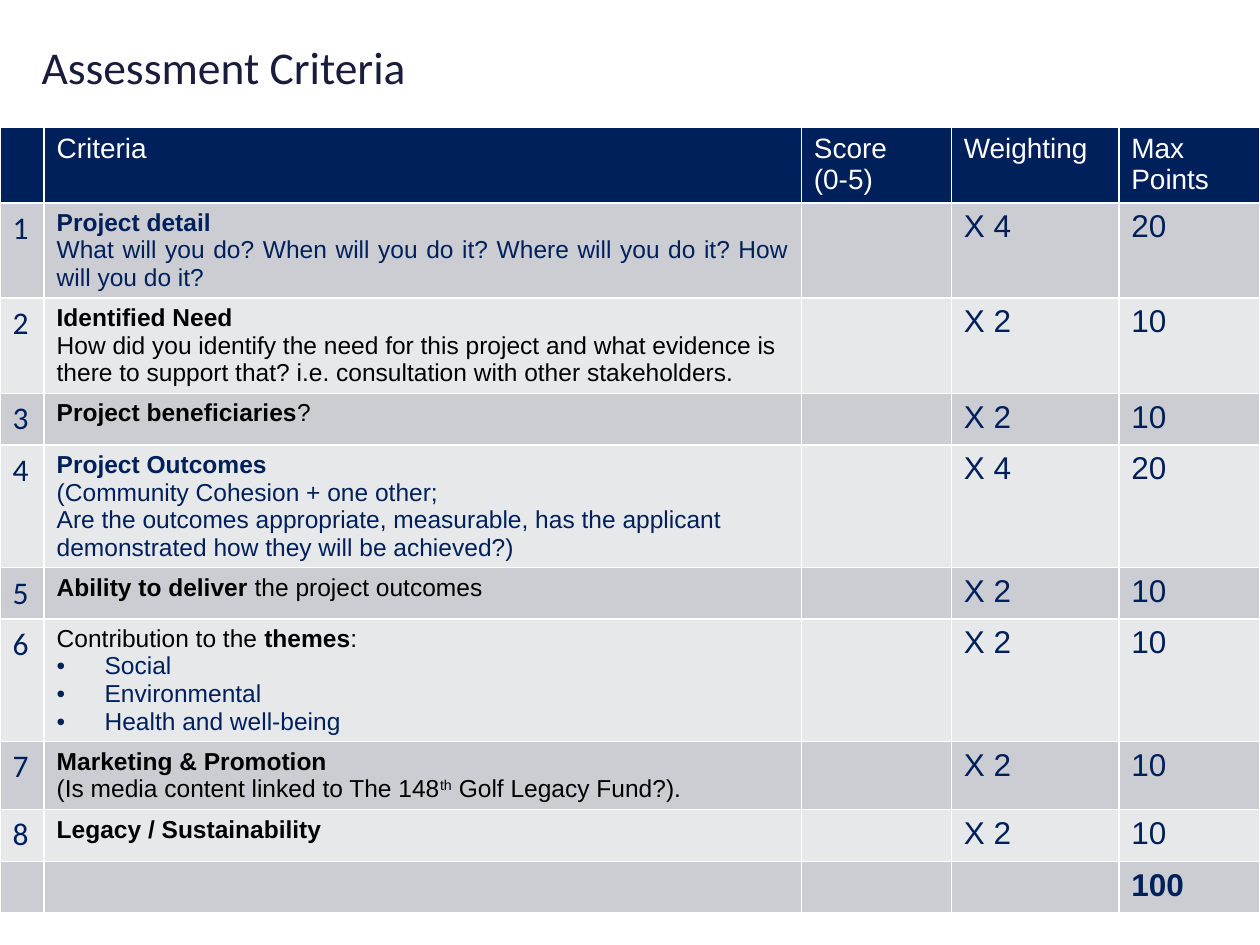
import lxml.etree
import pptx
import pptx.dml.color
import pptx.enum.shapes
import pptx.enum.text
import pptx.oxml.ns
import pptx.util

Inches = pptx.util.Inches
Pt = pptx.util.Pt
RGBColor = pptx.dml.color.RGBColor
qn = pptx.oxml.ns.qn
ALIGN = pptx.enum.text.PP_ALIGN

NAVY = RGBColor(0x00, 0x20, 0x5B)
INK = RGBColor(0x1A, 0x1C, 0x3C)
BLACK = RGBColor(0x00, 0x00, 0x00)
WHITE = RGBColor(0xFF, 0xFF, 0xFF)
DARK_BAND = RGBColor(0xCC, 0xCD, 0xD2)
LIGHT_BAND = RGBColor(0xE7, 0xE8, 0xEA)


def add_run(p, text, color, size, name="Arial", bold=False):
    r = p.add_run()
    r.text = text
    for key, value in {"size": Pt(size), "name": name, "bold": bold}.items():
        setattr(r.font, key, value)
    r.font.color.rgb = color
    return r


def style_cell(cell, fill):
    tcPr = cell._tc.get_or_add_tcPr()
    for side in "LRTB":
        ln = lxml.etree.SubElement(tcPr, qn(f"a:ln{side}"), w=str(Pt(1)))
        line_fill = lxml.etree.SubElement(ln, qn("a:solidFill"))
        lxml.etree.SubElement(line_fill, qn("a:srgbClr"), val=str(WHITE))
    cell.fill.solid()
    cell.fill.fore_color.rgb = fill


prs = pptx.Presentation()
prs.slide_width = Inches(10)
prs.slide_height = Inches(7.5)
s = prs.slides.add_slide(prs.slide_layouts[6])

for top in (0, 6.15):
    sp = s.shapes.add_shape(pptx.enum.shapes.MSO_SHAPE.RECTANGLE,
                            Inches(0), Inches(top), Inches(10), Inches(1.35))
    sp.shadow.inherit = False
    sp.fill.solid()
    sp.fill.fore_color.rgb = WHITE
    sp.line.fill.background()

headers = [[], ["Criteria"], ["Score", "(0-5)"], ["Weighting"], ["Max Points"]]
criteria = [
    (4, NAVY, [
        [("Project detail", "b")],
        [("What will you do? When will you do it? Where will you do it? How will you do it?", "")],
    ]),
    (2, BLACK, [
        [("Identified Need", "b")],
        [("How did you identify the need for this project and what evidence is there to support that? "
          "i.e. consultation with other stakeholders.", "")],
    ]),
    (2, BLACK, [[("Project beneficiaries", "b"), ("?", "")]]),
    (4, NAVY, [
        [("Project Outcomes", "b")],
        [("(Community Cohesion + one other;", "")],
        [("Are the outcomes appropriate, measurable, has the applicant demonstrated "
          "how they will be achieved?)", "")],
    ]),
    (2, BLACK, [[("Ability to deliver", "b"), (" the project outcomes", "")]]),
    (2, BLACK, [
        [("Contribution to the ", ""), ("themes", "b"), (":", "")],
        [("Social", "bullet")],
        [("Environmental", "bullet")],
        [("Health and well-being", "bullet")],
    ]),
    (2, BLACK, [
        [("Marketing & Promotion", "b")],
        [("(Is media content linked to The 148", ""), ("th", "super"), (" Golf Legacy Fund?).", "")],
    ]),
    (2, BLACK, [[("Legacy / Sustainability", "b")]]),
]
col_widths = [0.35, 6.01, 1.19, 1.33, 1.12]
row_heights = [0.6, 0.75, 0.75, 0.41, 0.97, 0.4, 0.97, 0.54, 0.41, 0.4]

frame = s.shapes.add_table(len(row_heights), len(col_widths), Inches(0), Inches(1.01),
                           Inches(10), Inches(sum(row_heights)))
table = frame.table
for col, width in zip(table.columns, col_widths):
    col.width = Inches(width)
for i, (row, height) in enumerate(zip(table.rows, row_heights)):
    row.height = Inches(height)
    fill = NAVY if i == 0 else DARK_BAND if i % 2 else LIGHT_BAND
    for cell in row.cells:
        style_cell(cell, fill)

for c, lines in enumerate(headers):
    tf = table.cell(0, c).text_frame
    for n, text in enumerate(lines):
        p = tf.add_paragraph() if n else tf.paragraphs[0]
        add_run(p, text, WHITE, 16)

for i, (weight, color, paragraphs) in enumerate(criteria, 1):
    add_run(table.cell(i, 0).text_frame.paragraphs[0], str(i), NAVY, 18, "Calibri")
    add_run(table.cell(i, 3).text_frame.paragraphs[0], f"X {weight}", NAVY, 18)
    add_run(table.cell(i, 4).text_frame.paragraphs[0], str(weight * 5), NAVY, 18)
    tf = table.cell(i, 1).text_frame
    for n, runs in enumerate(paragraphs):
        p = tf.add_paragraph() if n else tf.paragraphs[0]
        p.alignment = ALIGN.JUSTIFY if i == 1 else ALIGN.LEFT
        for text, mark in runs:
            r = add_run(p, text, NAVY if mark == "bullet" else color, 14, bold=mark == "b")
            if mark == "super":
                r._r.get_or_add_rPr().set("baseline", "30000")
            if mark == "bullet":
                pPr = p._p.get_or_add_pPr()
                pPr.set("marL", str(Inches(0.38)))
                pPr.set("indent", str(-Inches(0.38)))
                lxml.etree.SubElement(pPr, qn("a:buFont"), typeface="Arial")
                lxml.etree.SubElement(pPr, qn("a:buChar"), char="•")

total = table.cell(len(row_heights) - 1, 4).text_frame.paragraphs[0]
add_run(total, str(sum(weight * 5 for weight, _, _ in criteria)), NAVY, 18, bold=True)

title = s.shapes.add_textbox(Inches(0.33), Inches(0.31), Inches(9.14), Inches(0.79))
tf = title.text_frame
margins = {"margin_left": 0, "margin_top": 0, "margin_right": 0.1, "margin_bottom": 0}
for key, value in margins.items():
    setattr(tf, key, Inches(value))
tf.word_wrap = True
add_run(tf.paragraphs[0], "Assessment Criteria", INK, 26, "Calibri")

prs.save("out.pptx")
